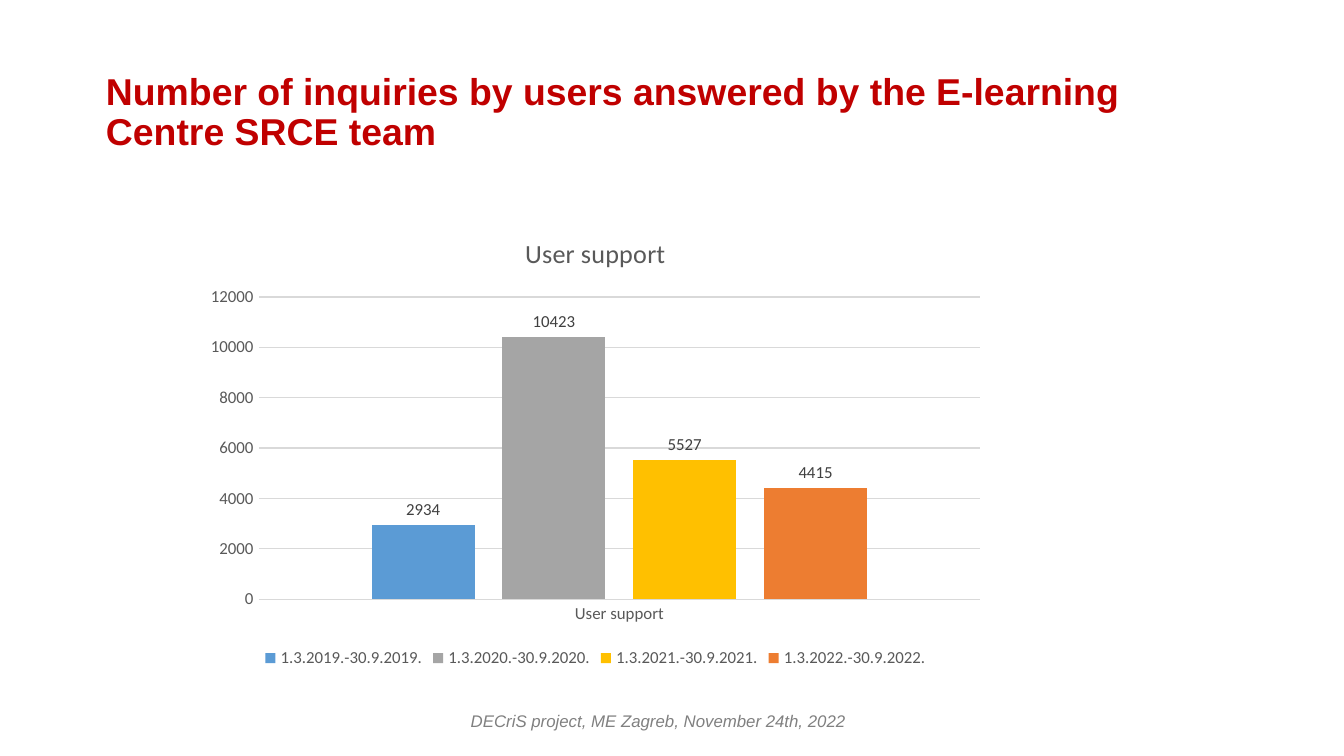
from pptx import Presentation
from pptx.chart.data import CategoryChartData
from pptx.dml.color import RGBColor
from pptx.enum.chart import (XL_CHART_TYPE, XL_LABEL_POSITION,
                             XL_LEGEND_POSITION, XL_TICK_MARK)
from pptx.enum.text import MSO_ANCHOR, PP_ALIGN
from pptx.util import Inches, Pt

COLUMNS = XL_CHART_TYPE.COLUMN_CLUSTERED
OUTSIDE_END = XL_LABEL_POSITION.OUTSIDE_END
BOTTOM = XL_LEGEND_POSITION.BOTTOM
NO_TICKS = XL_TICK_MARK.NONE
MIDDLE = MSO_ANCHOR.MIDDLE
LEFT, CENTER = PP_ALIGN.LEFT, PP_ALIGN.CENTER

RED = RGBColor(0xC0, 0x00, 0x00)
FOOTER_GREY = RGBColor(0x80, 0x80, 0x80)
AXIS_GREY = RGBColor(0x59, 0x59, 0x59)
LABEL_GREY = RGBColor(0x40, 0x40, 0x40)
GRID_GREY = RGBColor(0xD9, 0xD9, 0xD9)
BLUE = RGBColor(0x5B, 0x9B, 0xD5)
GREY = RGBColor(0xA5, 0xA5, 0xA5)
YELLOW = RGBColor(0xFF, 0xC0, 0x00)
ORANGE = RGBColor(0xED, 0x7D, 0x31)

WIDTH = Inches(10)
HEIGHT = WIDTH * 9 // 16
GRID = 100  # columns and rows across the slide

# Period, answered inquiries, bar colour
PERIODS = [
    ("1.3.2019.-30.9.2019.", 2934, BLUE),
    ("1.3.2020.-30.9.2020.", 10423, GREY),
    ("1.3.2021.-30.9.2021.", 5527, YELLOW),
    ("1.3.2022.-30.9.2022.", 4415, ORANGE),
]


class SlideBuilder:
    """Holds the style and the current slide; places are in grid units."""

    text_font = "Arial"
    chart_font = "Calibri"

    def __init__(self, slide):
        self.slide = slide

    def area(self, column, row, columns, rows):
        return (round(WIDTH * column / GRID), round(HEIGHT * row / GRID),
                round(WIDTH * columns / GRID), round(HEIGHT * rows / GRID))

    def style(self, font, name, size, color, bold=False, italic=False):
        font.name, font.size = name, Pt(size)
        font.bold, font.italic = bold, italic
        font.color.rgb = color

    def fill_frame(self, frame, text, align, size, color, **emphasis):
        frame.text = text
        frame.word_wrap = True
        frame.vertical_anchor = MIDDLE
        paragraph = frame.paragraphs[0]
        paragraph.alignment = align
        self.style(paragraph.font, self.text_font, size, color, **emphasis)
        return paragraph

    def title(self, text, place):
        heading = self.slide.shapes.title
        heading.left, heading.top, heading.width, heading.height = self.area(*place)
        paragraph = self.fill_frame(heading.text_frame, text, LEFT, 20, RED, bold=True)
        paragraph.line_spacing = 0.9

    def footer(self, text, place):
        box = self.slide.shapes.add_textbox(*self.area(*place))
        self.fill_frame(box.text_frame, text, CENTER, 9, FOOTER_GREY, italic=True)

    def axis(self, axis):
        axis.major_tick_mark = axis.minor_tick_mark = NO_TICKS
        self.style(axis.tick_labels.font, self.chart_font, 9, AXIS_GREY)

    def hairline(self, line):
        line.color.rgb = GRID_GREY
        line.width = Pt(0.75)

    def column_chart(self, heading, periods, place):
        data = CategoryChartData()
        data.categories = [heading]
        for period, inquiries, _ in periods:
            data.add_series(period, [inquiries])
        chart = self.slide.shapes.add_chart(COLUMNS, *self.area(*place), data).chart
        chart.font.name, chart.font.size = self.chart_font, Pt(10)

        # Heading and legend
        chart.has_title = True
        chart.chart_title.include_in_layout = False
        title_frame = chart.chart_title.text_frame
        title_frame.text = heading
        self.style(title_frame.paragraphs[0].font, self.chart_font, 14, AXIS_GREY)
        chart.has_legend = True
        chart.legend.position = BOTTOM
        chart.legend.include_in_layout = False
        self.style(chart.legend.font, self.chart_font, 9, AXIS_GREY)

        # Axes
        self.axis(chart.category_axis)
        self.hairline(chart.category_axis.format.line)
        self.axis(chart.value_axis)
        chart.value_axis.format.line.fill.background()
        self.hairline(chart.value_axis.major_gridlines.format.line)

        # Bars and their values
        plot = chart.plots[0]
        plot.gap_width, plot.overlap = 219, -27
        plot.vary_by_categories = False
        for series, (_, _, color) in zip(plot.series, periods):
            series.format.fill.solid()
            series.format.fill.fore_color.rgb = color
            labels = series.data_labels
            labels.show_value = True
            labels.position = OUTSIDE_END
            self.style(labels.font, self.chart_font, 9, LABEL_GREY)


def main():
    deck = Presentation()
    deck.slide_width, deck.slide_height = WIDTH, HEIGHT
    title_only = deck.slide_layouts[5]
    builder = SlideBuilder(deck.slides.add_slide(title_only))

    builder.title("Number of inquiries by users answered by the E-learning "
                  "Centre SRCE team", (6.88, 5.33, 86.25, 19.33))
    builder.footer("DECriS project, ME Zagreb, November 24th, 2022",
                   (17.35, 92.67, 63.2, 5.33))
    builder.column_chart("User support", PERIODS, (14.5, 28.27, 59.6, 60.8))

    deck.save("out.pptx")


if __name__ == "__main__":
    main()
